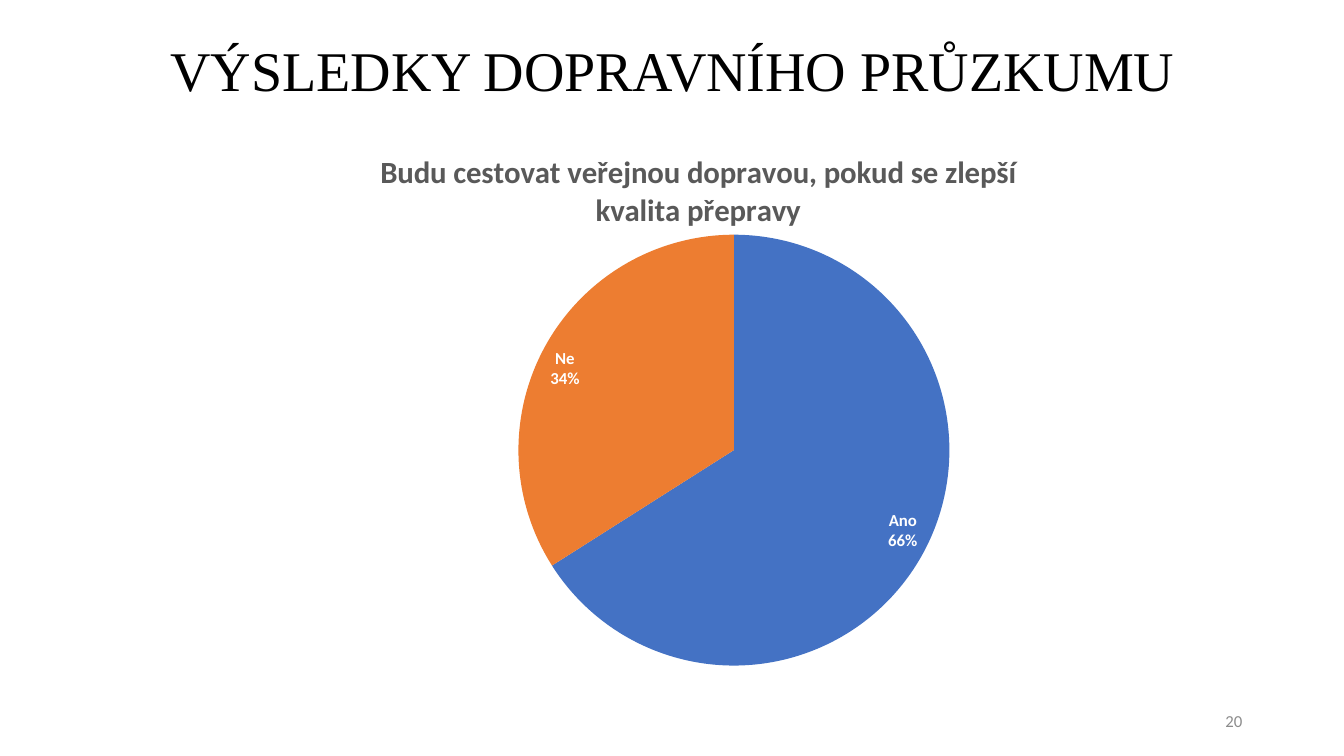
"""Build the transport survey results slide."""
from dataclasses import dataclass
from typing import Optional

from lxml.etree import SubElement
from pptx import Presentation
from pptx.chart.chart import Chart
from pptx.chart.data import CategoryChartData
from pptx.dml.color import RGBColor as RGB
from pptx.enum.chart import XL_CHART_TYPE as ChartType, XL_LABEL_POSITION as LabelPos
from pptx.enum.text import MSO_ANCHOR as Anchor, MSO_AUTO_SIZE as AutoSize, PP_ALIGN as Align
from pptx.oxml.ns import qn
from pptx.slide import Slide
from pptx.text.text import Font
from pptx.util import Emu, Pt

EMU_PER_PX = 9144


@dataclass(frozen=True)
class Theme:
    black: RGB = RGB(0, 0, 0)
    white: RGB = RGB(255, 255, 255)
    heading: RGB = RGB(0x59, 0x59, 0x59)
    number: RGB = RGB(0x8C, 0x8C, 0x8C)
    serif: str = "Times New Roman"
    sans: str = "Calibri"
    title_size: int = 40
    heading_size: int = 22
    label_size: int = 12
    chart_size: int = 10


@dataclass(frozen=True)
class Box:
    left: int
    top: int
    width: int
    height: int

    def emu(self) -> tuple[Emu, Emu, Emu, Emu]:
        return px(self.left), px(self.top), px(self.width), px(self.height)


@dataclass(frozen=True)
class TextBlock:
    text: str
    box: Box
    align: Align
    size: int
    name: str
    color: RGB
    line_spacing: Optional[float] = None


@dataclass(frozen=True)
class Answer:
    name: str
    percent: int
    color: RGB


THEME = Theme()
TITLE = TextBlock("VÝSLEDKY DOPRAVNÍHO PRŮZKUMU", Box(92, 0, 1150, 145), Align.CENTER,
                  THEME.title_size, THEME.serif, THEME.black, 0.9)
NUMBER = TextBlock("20", Box(942, 695, 300, 40), Align.RIGHT,
                   THEME.label_size, THEME.sans, THEME.number)
CHART_BOX = Box(241, 136, 952, 614)
HEADING = ("Budu cestovat veřejnou dopravou, pokud se zlepší", "kvalita přepravy")
ANSWERS = (
    Answer("Ano", 66, RGB(0x44, 0x72, 0xC4)),
    Answer("Ne", 34, RGB(0xED, 0x7D, 0x31)),
)


def px(n: int) -> Emu:
    return Emu(n * EMU_PER_PX)


def style(font: Font, size: int, name: str, color: RGB, bold: bool = False) -> None:
    font.size, font.name, font.bold = Pt(size), name, bold
    font.color.rgb = color


def write(sp, block: TextBlock) -> None:
    sp.left, sp.top, sp.width, sp.height = block.box.emu()
    tf = sp.text_frame
    tf.word_wrap, tf.auto_size = True, AutoSize.NONE
    tf.vertical_anchor = Anchor.MIDDLE
    p = tf.paragraphs[0]
    p.alignment = block.align
    if block.line_spacing:
        p.line_spacing = block.line_spacing
    r = p.add_run()
    r.text = block.text
    style(r.font, block.size, block.name, block.color)


def set_layout(parent, index: int, **values: str) -> None:
    for old in parent.findall(qn("c:layout")):
        parent.remove(old)
    layout = SubElement(parent, qn("c:layout"))
    manual = SubElement(layout, qn("c:manualLayout"))
    for tag, value in values.items():
        SubElement(manual, qn(f"c:{tag}")).set("val", value)
    parent.insert(index, layout)


def add_heading(chart: Chart) -> None:
    chart.has_title = True
    title = chart.chart_title
    title.include_in_layout = False
    tf = title.text_frame
    for i, line in enumerate(HEADING):
        p = tf.add_paragraph() if i else tf.paragraphs[0]
        p.alignment = Align.CENTER
        r = p.add_run()
        r.text = line
        style(r.font, THEME.heading_size, THEME.sans, THEME.heading, True)
    set_layout(title._element, 1, xMode="edge", yMode="edge", x="0.14", y="0.02")


def add_pie(s: Slide) -> None:
    data = CategoryChartData(number_format="0")
    data.categories = [a.name for a in ANSWERS]
    data.add_series("Series 1", [a.percent for a in ANSWERS])
    chart = s.shapes.add_chart(ChartType.PIE, *CHART_BOX.emu(), data).chart
    style(chart.font, THEME.chart_size, THEME.sans, THEME.black)
    chart.has_legend = False
    add_heading(chart)

    plot = chart.plots[0]
    plot.vary_by_categories = True
    for i, answer in enumerate(ANSWERS):
        fmt = plot.series[0].points[i].format
        fmt.fill.solid()
        fmt.fill.fore_color.rgb = answer.color
        fmt.line.fill.background()

    labels = plot.series[0].data_labels
    labels.show_value = False
    labels.show_percentage = labels.show_category_name = True
    labels.number_format, labels.number_format_is_linked = "0%", False
    labels.position = LabelPos.INSIDE_END
    style(labels.font, THEME.label_size, THEME.sans, THEME.white, True)
    set_layout(plot._element.getparent(), 0, layoutTarget="inner", xMode="edge",
               yMode="edge", x="0.287", y="0.135", w="0.449", h="0.742")


def main() -> None:
    prs = Presentation()
    prs.slide_width, prs.slide_height = px(1333), px(750)
    s = prs.slides.add_slide(prs.slide_layouts[5])
    write(s.shapes.title, TITLE)
    add_pie(s)
    write(s.shapes.add_textbox(*NUMBER.box.emu()), NUMBER)
    prs.save("out.pptx")


if __name__ == "__main__":
    main()
